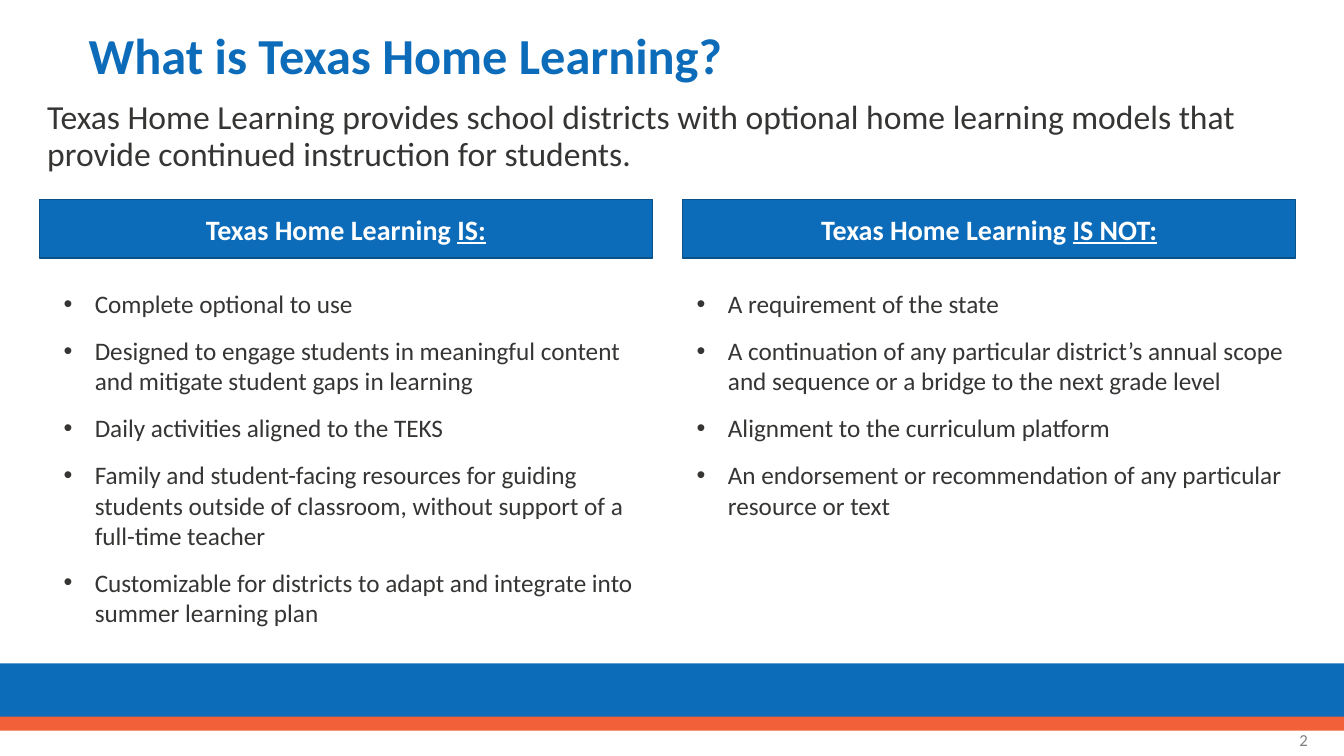
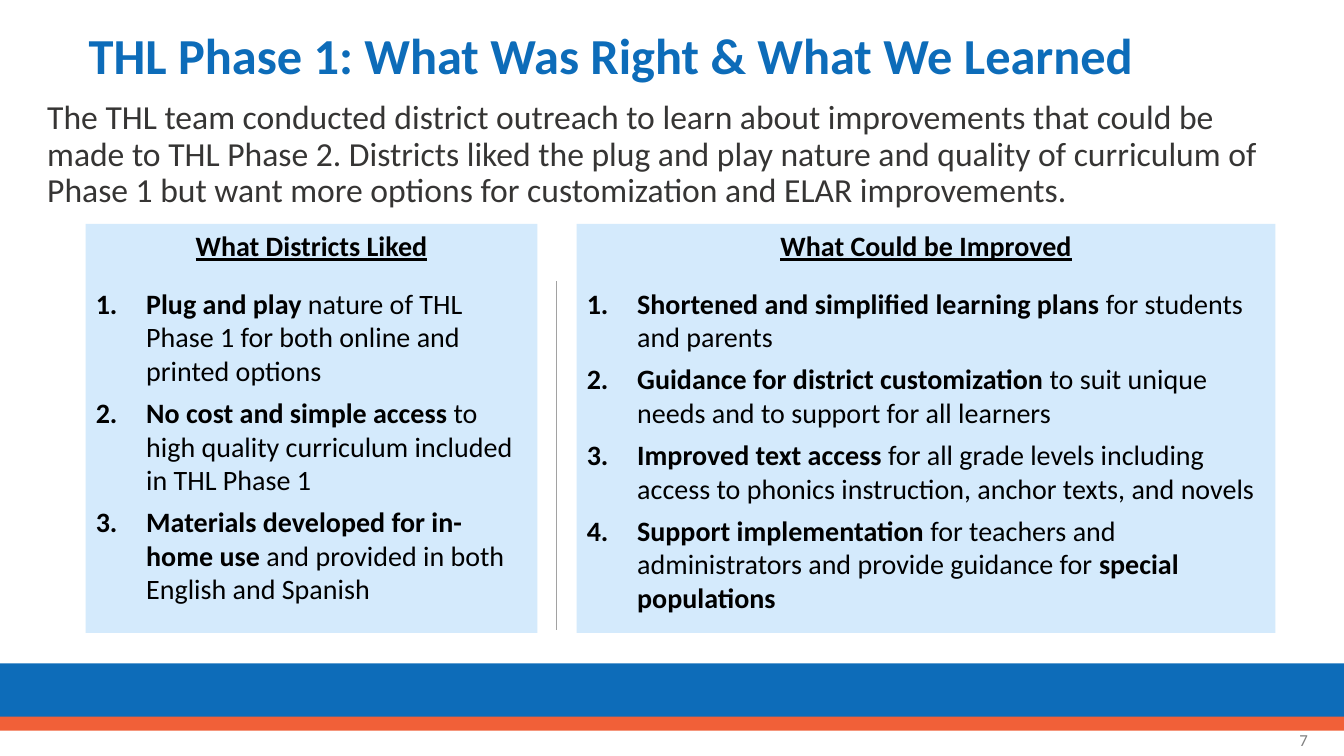
from dataclasses import dataclass

from lxml.etree import SubElement
from pptx import Presentation
from pptx.dml.color import RGBColor
from pptx.enum.shapes import MSO_CONNECTOR, MSO_SHAPE
from pptx.enum.text import MSO_ANCHOR, MSO_AUTO_SIZE, PP_ALIGN
from pptx.oxml.ns import qn
from pptx.util import Inches, Pt


@dataclass(frozen=True)
class Theme:
    font: str = "Calibri"
    blue: str = "0D6CB9"
    blue_edge: str = "0A5089"
    orange: str = "F16038"
    pale: str = "D4EAFC"
    text: str = "363534"
    black: str = "000000"
    white: str = "FFFFFF"
    grey: str = "808080"
    rule: str = "A2A2A2"
    title_size: int = 36
    intro_size: int = 24
    heading_size: int = 20
    list_size: int = 18
    number_size: int = 12


class Deck:
    """Holds the theme and the current slide, and draws each kind of element."""

    def __init__(self, theme):
        self.theme = theme
        self.prs = Presentation()
        self.prs.slide_width = Inches(13.33)
        self.prs.slide_height = Inches(7.5)
        self.s = None

    def slide(self, title, intro, number):
        t = self.theme
        self.s = self.prs.slides.add_slide(self.prs.slide_layouts[3])
        self.rect((0, 6.58, 13.33, 0.58), t.blue)
        self.rect((0, 7.11, 13.33, 0.14), t.orange)
        tf = self.place(self.s.shapes.title, (0.78, 0.17, 12.2, 0.82), MSO_ANCHOR.MIDDLE)
        p = tf.paragraphs[0]
        p.alignment = PP_ALIGN.LEFT
        p.line_spacing = 0.9
        self.run(p, title, t.title_size, t.blue, bold=True)
        p = self.text_box((0.37, 0.95, 12.57, 1.03), MSO_ANCHOR.TOP)
        p.line_spacing = 0.9
        self.run(p, intro, t.intro_size, t.text)
        p = self.text_box((10.07, 7.14, 3, 0.4), MSO_ANCHOR.MIDDLE)
        p.alignment = PP_ALIGN.RIGHT
        self.run(p, number, t.number_size, t.grey)

    def place(self, sp, box, anchor):
        sp.left, sp.top, sp.width, sp.height = map(Inches, box)
        tf = sp.text_frame
        tf.word_wrap = True
        tf.auto_size = MSO_AUTO_SIZE.NONE
        tf.vertical_anchor = anchor
        return tf

    def text_box(self, box, anchor):
        sp = self.s.shapes.add_textbox(*map(Inches, box))
        return self.place(sp, box, anchor).paragraphs[0]

    def rect(self, box, fill, edge=None):
        sp = self.s.shapes.add_shape(MSO_SHAPE.RECTANGLE, *map(Inches, box))
        sp.shadow.inherit = False
        sp.fill.solid()
        sp.fill.fore_color.rgb = RGBColor.from_string(fill)
        if edge:
            sp.line.color.rgb = RGBColor.from_string(edge)
            sp.line.width = Pt(1)
        else:
            sp.line.fill.background()
        return sp

    def run(self, p, text, size, color, bold=False, underline=False):
        r = p.add_run()
        r.text = text
        r.font.name = self.theme.font
        r.font.size = Pt(size)
        r.font.color.rgb = RGBColor.from_string(color)
        r.font.bold = bold
        r.font.underline = underline

    def marker(self, p, indent, kind, **attributes):
        pPr = p._p.get_or_add_pPr()
        pPr.set("marL", str(Inches(indent)))
        pPr.set("indent", str(-Inches(indent)))
        SubElement(pPr, qn(f"a:{kind}"), **attributes)

    def banner(self, box, lead, stress):
        t = self.theme
        sp = self.rect(box, t.blue, t.blue_edge)
        sp.text_frame.vertical_anchor = MSO_ANCHOR.MIDDLE
        p = sp.text_frame.paragraphs[0]
        p.alignment = PP_ALIGN.CENTER
        self.run(p, lead, t.heading_size, t.white, bold=True)
        self.run(p, stress, t.heading_size, t.white, bold=True, underline=True)

    def bullets(self, idx, box, items):
        t = self.theme
        tf = self.place(self.s.placeholders[idx], box, MSO_ANCHOR.TOP)
        for i, item in enumerate(items):
            p = tf.add_paragraph() if i else tf.paragraphs[0]
            self.marker(p, 0.31, "buChar", char="•")
            p.space_before = Pt(0)
            p.space_after = Pt(12)
            self.run(p, item, t.list_size, t.text)

    def panel(self, idx, box, heading, items):
        t = self.theme
        sp = self.s.placeholders[idx]
        sp.fill.solid()
        sp.fill.fore_color.rgb = RGBColor.from_string(t.pale)
        tf = self.place(sp, box, MSO_ANCHOR.TOP)
        p = tf.paragraphs[0]
        self.marker(p, 0, "buNone")
        p.alignment = PP_ALIGN.CENTER
        p.space_before = Pt(0)
        p.space_after = Pt(17)
        self.run(p, heading, t.heading_size, t.black, bold=True, underline=True)
        for item in items:
            p = tf.add_paragraph()
            self.marker(p, 0.5, "buAutoNum", type="arabicPeriod")
            p.space_before = Pt(0)
            p.space_after = Pt(6)
            for i, text in enumerate(item):
                self.run(p, text, t.heading_size, t.black, bold=i % 2 == 0)

    def divider(self, x, top, bottom):
        ends = map(Inches, (x, top, x, bottom))
        line = self.s.shapes.add_connector(MSO_CONNECTOR.STRAIGHT, *ends)
        line.line.color.rgb = RGBColor.from_string(self.theme.rule)
        line.line.width = Pt(0.5)
        SubElement(line._element.spPr, qn("a:effectLst"))


def main():
    deck = Deck(Theme())

    deck.slide(
        "What is Texas Home Learning?",
        "Texas Home Learning provides school districts with optional home learning "
        "models that provide continued instruction for students.",
        "2",
    )
    columns = [
        (0.39, 0.53, "IS:", [
            "Complete optional to use",
            "Designed to engage students in meaningful content and mitigate student gaps in learning",
            "Daily activities aligned to the TEKS",
            "Family and student-facing resources for guiding students outside of classroom, "
            "without support of a full-time teacher",
            "Customizable for districts to adapt and integrate into summer learning plan",
        ]),
        (6.77, 6.81, "IS NOT:", [
            "A requirement of the state",
            "A continuation of any particular district’s annual scope and sequence "
            "or a bridge to the next grade level",
            "Alignment to the curriculum platform",
            "An endorsement or recommendation of any particular resource or text",
        ]),
    ]
    for idx, (banner_x, list_x, stress, items) in enumerate(columns, 1):
        deck.banner((banner_x, 1.98, 6.08, 0.58), "Texas Home Learning ", stress)
        deck.bullets(idx, (list_x, 2.81, 6.08, 3.7), items)

    deck.slide(
        "THL Phase 1: What Was Right & What We Learned",
        "The THL team conducted district outreach to learn about improvements that could be "
        "made to THL Phase 2. Districts liked the plug and play nature and quality of curriculum "
        "of Phase 1 but want more options for customization and ELAR improvements.",
        "7",
    )
    panels = [
        (0.85, 4.48, "What Districts Liked", [
            ("Plug and play ", "nature of THL Phase 1 for both online and printed options"),
            ("No cost and simple access ", "to high quality curriculum included in THL Phase 1"),
            ("Materials developed for in-home use", " and provided in both English and Spanish"),
        ]),
        (5.72, 6.93, "What Could be Improved", [
            ("Shortened and simplified learning plans ", "for students and parents"),
            ("Guidance for district customization ",
             "to suit unique needs and to support for all learners"),
            ("Improved text access ", "for all grade levels including access to phonics "
             "instruction, anchor texts, and novels"),
            ("Support implementation", " for teachers and administrators and provide guidance for ",
             "special populations"),
        ]),
    ]
    for idx, (x, width, heading, items) in enumerate(panels, 1):
        deck.panel(idx, (x, 2.22, width, 4.06), heading, items)
    deck.divider(5.52, 2.79, 6.25)

    deck.prs.save("out.pptx")


if __name__ == "__main__":
    main()
